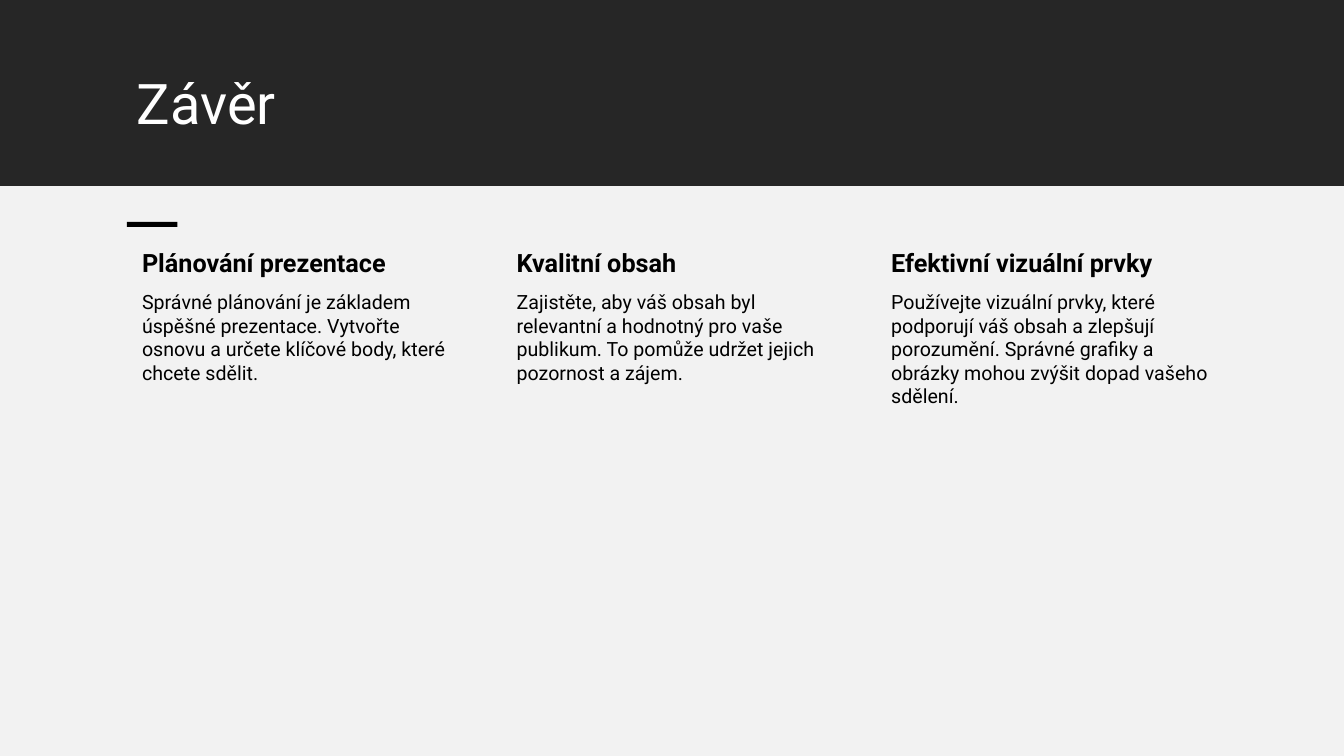
from dataclasses import dataclass

from pptx import Presentation
from pptx.dml.color import RGBColor as Color
from pptx.enum.shapes import MSO_SHAPE as Kind
from pptx.enum.text import MSO_ANCHOR as Anchor
from pptx.util import Cm, Pt

TITLE = "Závěr"
TOPICS = [
    ("Plánování prezentace",
     "Správné plánování je základem úspěšné prezentace. "
     "Vytvořte osnovu a určete klíčové body, které chcete sdělit."),
    ("Kvalitní obsah",
     "Zajistěte, aby váš obsah byl relevantní a hodnotný pro vaše publikum. "
     "To pomůže udržet jejich pozornost a zájem."),
    ("Efektivní vizuální prvky",
     "Používejte vizuální prvky, které podporují váš obsah a zlepšují "
     "porozumění. Správné grafiky a obrázky mohou zvýšit dopad vašeho sdělení."),
]


@dataclass(frozen=True)
class Theme:
    font: str = "Roboto"
    dark: str = "262626"
    light: str = "F2F2F2"
    ink: str = "000000"
    white: str = "FFFFFF"
    title: int = 40
    head: int = 18
    body: int = 14


THEME = Theme()
WIDTH, HEIGHT = 33.87, 19.05
BAND = 4.69
LEFT, STEP, COL = 3.2, 9.44, 8.59
HEAD_TOP, HEAD_HIGH = 6.15, 1.1
BODY_TOP, BODY_HIGH = 7.26, 9.91


def add_bar(slide, box, color):
    bar = slide.shapes.add_shape(Kind.RECTANGLE, *map(Cm, box))
    bar.shadow.inherit = False
    bar.fill.solid()
    bar.fill.fore_color.rgb = Color.from_string(color)
    bar.line.fill.background()


def add_text(slide, box, text, size, color, pads, bold=False):
    """Add a wrapped box; pads are the left inset and the other three."""
    frame = slide.shapes.add_textbox(*map(Cm, box)).text_frame
    frame.word_wrap = True
    frame.vertical_anchor = Anchor.TOP
    side, rest = map(Cm, pads)
    frame.margin_left = side
    frame.margin_top = frame.margin_right = frame.margin_bottom = rest
    frame.text = text
    para = frame.paragraphs[0]
    font = para.runs[0].font
    font.name, font.size, font.bold = THEME.font, Pt(size), bold
    font.color.rgb = Color.from_string(color)
    return para


def main():
    deck = Presentation()
    deck.slide_width, deck.slide_height = Cm(WIDTH), Cm(HEIGHT)
    slide = deck.slides.add_slide(deck.slide_layouts[6])

    add_bar(slide, (0, 0, WIDTH, BAND), THEME.dark)
    title = add_text(slide, (LEFT, 1.78, 27.46, 2.49), TITLE,
                     THEME.title, THEME.white, (0.25, 0.13))
    title.line_spacing = 0.9
    add_bar(slide, (0, BAND, WIDTH, HEIGHT - BAND), THEME.light)
    add_bar(slide, (LEFT, 5.59, 1.27, 0.13), THEME.ink)

    for i, (head, body) in enumerate(TOPICS):
        x = LEFT + i * STEP
        add_text(slide, (x, HEAD_TOP, COL, HEAD_HIGH), head,
                 THEME.head, THEME.ink, (0.38, 0.08), bold=True)
        add_text(slide, (x, BODY_TOP, COL, BODY_HIGH), body,
                 THEME.body, THEME.ink, (0.38, 0.05))

    deck.save("out.pptx")


if __name__ == "__main__":
    main()
